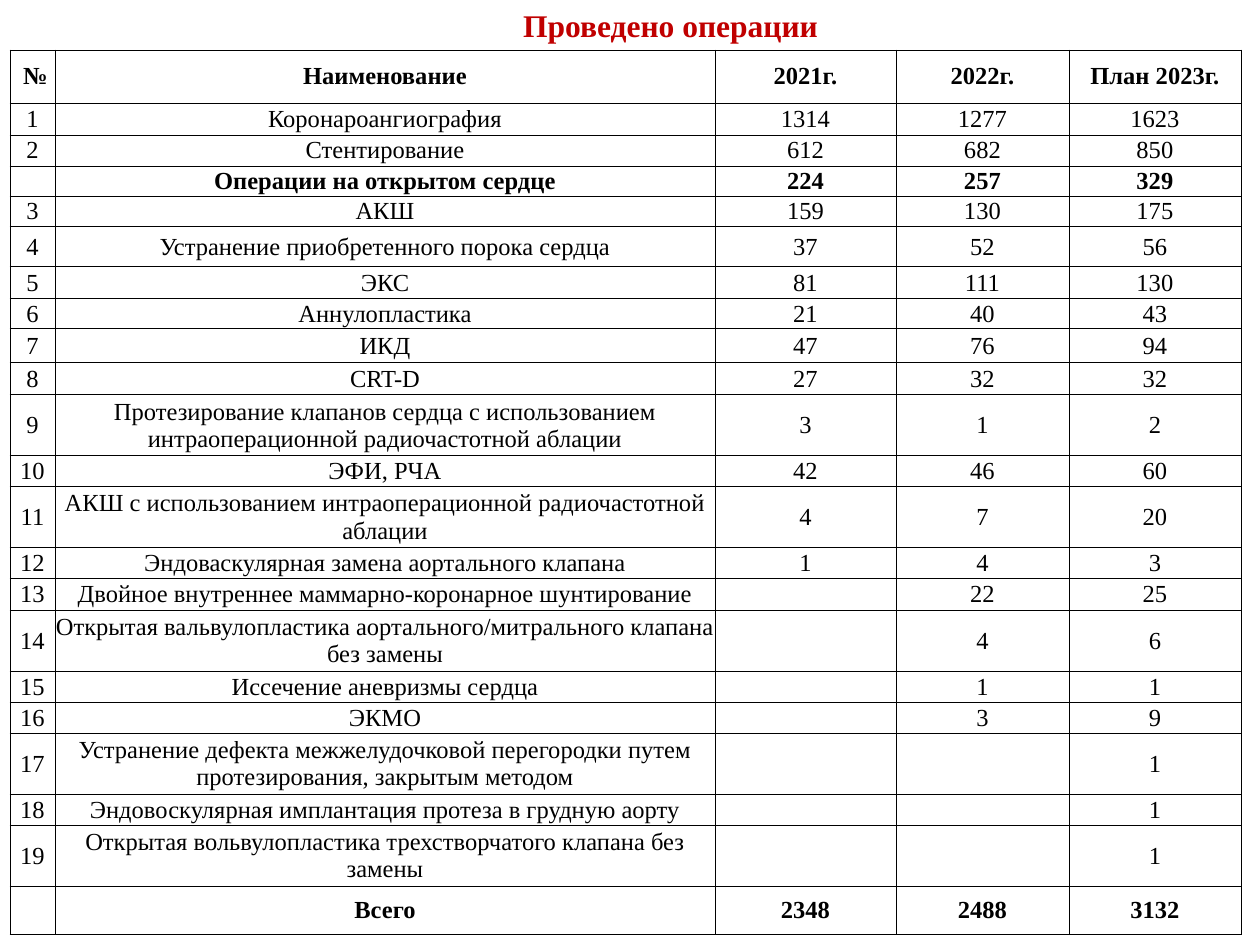
from lxml.etree import SubElement
from pptx import Presentation
from pptx.dml.color import RGBColor
from pptx.enum.text import MSO_ANCHOR, MSO_AUTO_SIZE, PP_ALIGN
from pptx.oxml.ns import qn
from pptx.util import Pt

PX = 914400 // 126
FONT = "Times New Roman"
BLACK = RGBColor(0, 0, 0)
RED = RGBColor(0xC0, 0, 0)
BODY_SIZE = Pt(14)
BORDER = Pt(0.5)

COL_WIDTHS = [45, 660, 181, 173, 172]
# Row height in px, then the five cells
ROWS = [
    (53, "№", "Наименование", "2021г.", "2022г.", "План 2023г."),
    (32, "1", "Коронароангиография", "1314", "1277", "1623"),
    (31, "2", "Стентирование", "612", "682", "850"),
    (30, "", "Операции на открытом сердце", "224", "257", "329"),
    (31, "3", "АКШ", "159", "130", "175"),
    (40, "4", "Устранение приобретенного порока сердца", "37", "52", "56"),
    (32, "5", "ЭКС", "81", "111", "130"),
    (30, "6", "Аннулопластика", "21", "40", "43"),
    (34, "7", "ИКД", "47", "76", "94"),
    (32, "8", "CRT-D", "27", "32", "32"),
    (61, "9", "Протезирование клапанов сердца с использованием "
     "интраоперационной радиочастотной аблации", "3", "1", "2"),
    (31, "10", "ЭФИ, РЧА", "42", "46", "60"),
    (61, "11", "АКШ с использованием интраоперационной радиочастотной аблации",
     "4", "7", "20"),
    (31, "12", "Эндоваскулярная замена аортального клапана", "1", "4", "3"),
    (32, "13", "Двойное внутреннее маммарно-коронарное шунтирование",
     "", "22", "25"),
    (61, "14", "Открытая вальвулопластика аортального/митрального клапана "
     "без замены", "", "4", "6"),
    (31, "15", "Иссечение аневризмы сердца", "", "1", "1"),
    (31, "16", "ЭКМО", "", "3", "9"),
    (61, "17", "Устранение дефекта межжелудочковой перегородки путем "
     "протезирования, закрытым методом", "", "", "1"),
    (31, "18", "Эндовоскулярная имплантация протеза в грудную аорту",
     "", "", "1"),
    (61, "19", "Открытая вольвулопластика трехстворчатого клапана без замены",
     "", "", "1"),
    (48, "", "Всего", "2348", "2488", "3132"),
]


def px(n):
    return n * PX


def format_text(p, size, color, bold):
    p.alignment = PP_ALIGN.CENTER
    for r in p.runs:
        r.font.name = FONT
        r.font.size = size
        r.font.bold = bold
        r.font.color.rgb = color
    if not p.runs:
        # An empty cell still needs the small size, or its row grows
        SubElement(p._p, qn("a:endParaRPr"), sz=str(int(size.pt * 100)))


def set_borders(cell):
    tc_pr = cell._tc.get_or_add_tcPr()
    for side in ("a:lnL", "a:lnR", "a:lnT", "a:lnB"):
        line = SubElement(tc_pr, qn(side), w=str(BORDER))
        fill = SubElement(line, qn("a:solidFill"))
        SubElement(fill, qn("a:srgbClr"), val=str(BLACK))


def fill_cell(cell, text, bold):
    cell.margin_left = cell.margin_right = 0
    cell.margin_top = cell.margin_bottom = 0
    cell.vertical_anchor = MSO_ANCHOR.MIDDLE
    cell.text_frame.text = text
    format_text(cell.text_frame.paragraphs[0], BODY_SIZE, BLACK, bold)
    set_borders(cell)
    cell.fill.background()


def add_title(s, text):
    title = s.shapes.title
    title.left, title.top = px(118), 0
    title.width, title.height = px(1027), px(50)
    tf = title.text_frame
    tf.text = text
    tf.word_wrap = True
    tf.auto_size = MSO_AUTO_SIZE.SHAPE_TO_FIT_TEXT
    tf.vertical_anchor = MSO_ANCHOR.TOP
    tf.margin_left = px(91)
    format_text(tf.paragraphs[0], Pt(18), RED, True)


def add_operations_table(s):
    heights = [row[0] for row in ROWS]
    frame = s.shapes.add_table(len(ROWS), len(COL_WIDTHS), px(10), px(50),
                               px(sum(COL_WIDTHS)), px(sum(heights)))
    table = frame.table
    table.first_row = table.horz_banding = False
    for column, width in zip(table.columns, COL_WIDTHS):
        column.width = px(width)
    for row, (height, *texts) in zip(table.rows, ROWS):
        row.height = px(height)
        bold = not texts[0].isdigit()
        for cell, text in zip(row.cells, texts):
            fill_cell(cell, text, bold)
    table.cell(0, 0).margin_left = px(6)


def main():
    prs = Presentation()
    prs.slide_width, prs.slide_height = px(1260), px(945)
    s = prs.slides.add_slide(prs.slide_layouts[5])
    add_operations_table(s)
    add_title(s, "Проведено операции")
    prs.save("out.pptx")


if __name__ == "__main__":
    main()
